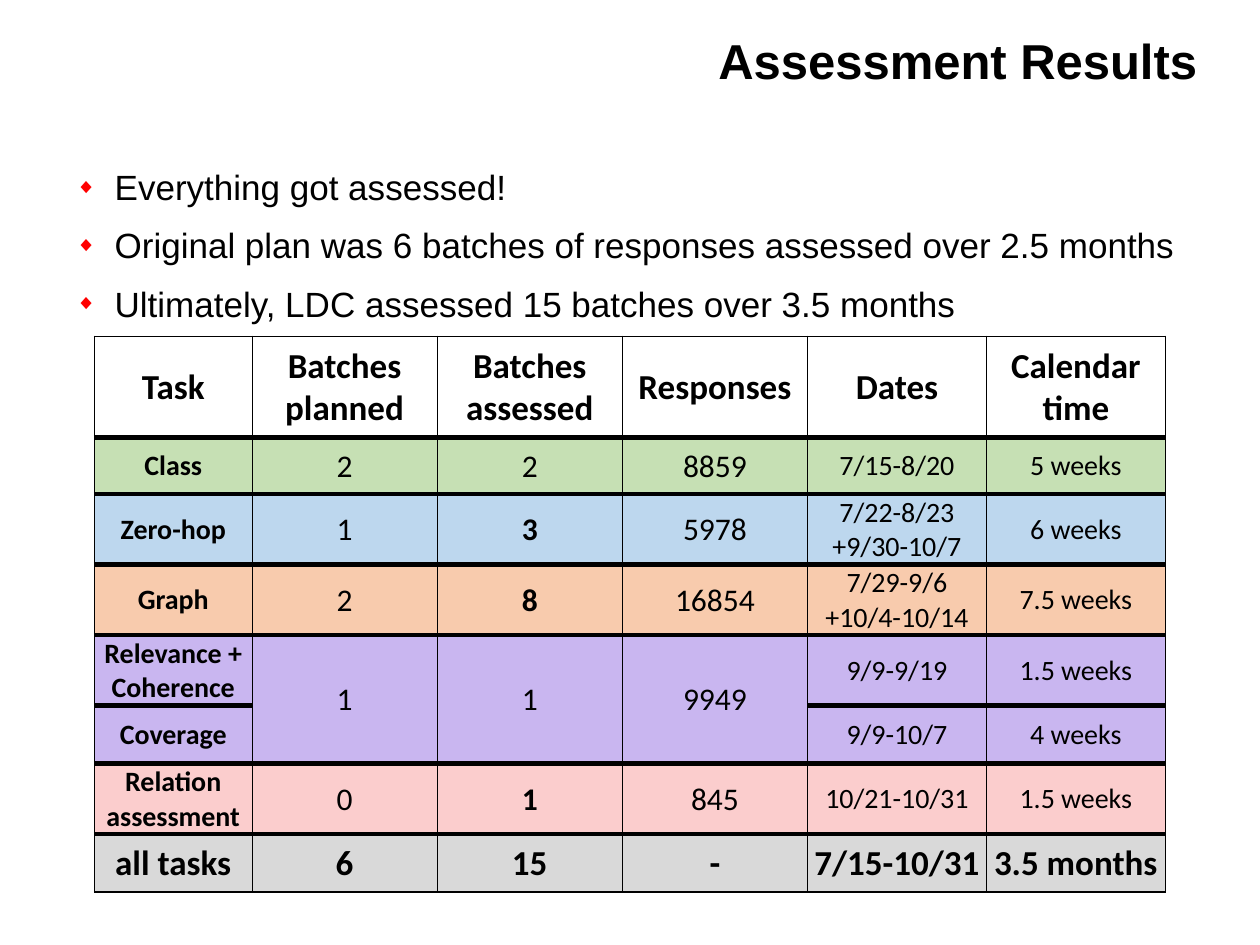
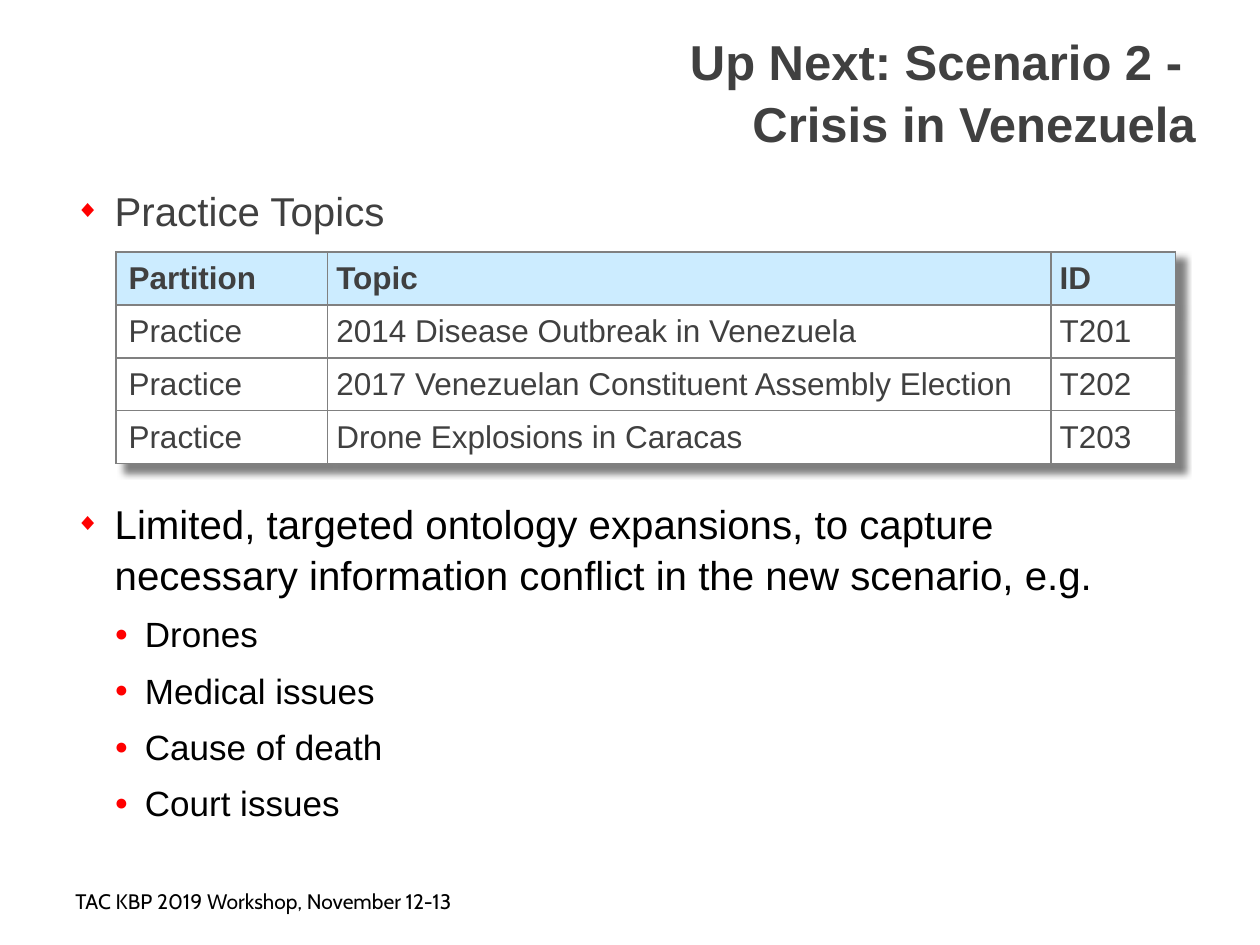
from lxml import etree
from pptx import Presentation
from pptx import util as u
from pptx.dml.color import RGBColor
from pptx.enum import text as t
from pptx.oxml.ns import qn

hue = RGBColor.from_string
INK, GREY, RED = "000000", "404040", "FF0000"
CELL = u.Inches(0.1)  # the slide is a grid of 100 columns by 75 rows
BULLETS = [("◆", 60, 0.31, 0.31, 8), ("●", 65, 0.55, 0.24, 7)]
MARGINS = ("margin_left", "margin_top", "margin_right", "margin_bottom")


def style(frame, color, align=t.PP_ALIGN.LEFT, **fmt):
    for para in frame.paragraphs:
        para.alignment = align
        for run in para.runs:
            run.font.color.rgb = hue(color)
            for key, val in fmt.items():
                setattr(run.font, key, val)


def edge(cell, color, **widths):
    """Draw the cell's borders; widths in points, given as L, R, T, B in that order."""
    props = cell._tc.get_or_add_tcPr()
    for spot, (side, width) in enumerate(widths.items()):
        line = etree.Element(qn(f"a:ln{side}"), w=str(int(u.Pt(width))))
        fill = etree.SubElement(line, qn("a:solidFill"))
        etree.SubElement(fill, qn("a:srgbClr"), val=color)
        props.insert(spot, line)


# Each list item: level, text, size, colour, extra space before
pages = [
    dict(
        title="Assessment Results", color=INK, head=(36.7, 2.2), top=12.5,
        items=[
            (0, "Everything got assessed!", 20, INK, 0),
            (0, "Original plan was 6 batches of responses assessed over 2.5 months", 20, INK, 0),
            (0, "Ultimately, LDC assessed 15 batches over 3.5 months", 20, INK, 0),
        ],
        spot=(7.5, 26.7),
        cols=[12.5, 14.7, 14.7, 14.7, 14.2, 14.2],
        rows=[8, 4.5, 5.6, 5.6, 5.6, 4.6, 5.6, 4.6],
        data=[
            ["Task", "Batches planned", "Batches assessed", "Responses", "Dates", "Calendar time"],
            ["Class", "2", "2", "8859", "7/15-8/20", "5 weeks"],
            ["Zero-hop", "1", "3", "5978", "7/22-8/23\n+9/30-10/7", "6 weeks"],
            ["Graph", "2", "8", "16854", "7/29-9/6\n+10/4-10/14", "7.5 weeks"],
            ["Relevance +\nCoherence", "1", "1", "9949", "9/9-9/19", "1.5 weeks"],
            ["Coverage", "", "", "", "9/9-10/7", "4 weeks"],
            ["Relation assessment", "0", "1", "845", "10/21-10/31", "1.5 weeks"],
            ["all tasks", "6", "15", "-", "7/15-10/31", "3.5 months"],
        ],
    ),
    dict(
        title="Up Next: Scenario 2 - \vCrisis in Venezuela", color=GREY, head=(36.6, 2.3), top=14.1,
        items=[
            (0, "Practice Topics", 23, GREY, 0),
            (0, "Limited, targeted ontology expansions, to capture necessary information "
                "conflict in the new scenario, e.g.", 23, INK, 142),
            (1, "Drones", 20, INK, 0),
            (1, "Medical issues", 20, INK, 0),
            (1, "Cause of death", 20, INK, 0),
            (1, "Court issues", 20, INK, 0),
        ],
        spot=(9.2, 20),
        cols=[16.8, 57.4, 9.9],
        rows=[4.2] * 4,
        data=[
            ["Partition", "Topic", "ID"],
            ["Practice", "2014 Disease Outbreak in Venezuela", "T201"],
            ["Practice", "2017 Venezuelan Constituent Assembly Election", "T202"],
            ["Practice", "Drone Explosions in Caracas", "T203"],
        ],
    ),
]

deck = Presentation()
deck.slide_width, deck.slide_height = 100 * CELL, 75 * CELL
tables = []

for page in pages:
    slide = deck.slides.add_slide(deck.slide_layouts[1])
    title, body = slide.placeholders
    boxes = [(title, (*page["head"], 58.3, 8.7)), (body, (5, page["top"], 90, 54.2))]
    for shape, box in boxes:
        for key, val in zip(("left", "top", "width", "height"), box):
            setattr(shape, key, int(val * CELL))
        shape.text_frame.auto_size = t.MSO_AUTO_SIZE.NONE
        shape.text_frame.vertical_anchor = t.MSO_ANCHOR.TOP

    frame = title.text_frame
    for side in MARGINS:
        setattr(frame, side, 0)
    frame.text = page["title"]
    frame.paragraphs[0].line_spacing = 1.05
    style(frame, page["color"], t.PP_ALIGN.RIGHT, name="Arial", size=u.Pt(28), bold=True)

    frame = body.text_frame
    for n, (level, words, size, color, extra) in enumerate(page["items"]):
        para = frame.add_paragraph() if n else frame.paragraphs[0]
        para.level = level
        mark, share, left, hang, before = BULLETS[level]
        props = para._p.get_or_add_pPr()
        props.set("marL", str(int(u.Inches(left))))
        props.set("indent", str(-int(u.Inches(hang))))
        tint = etree.SubElement(props, qn("a:buClr"))
        etree.SubElement(tint, qn("a:srgbClr"), val=RED)
        etree.SubElement(props, qn("a:buSzPct"), val=str(share * 1000))
        etree.SubElement(props, qn("a:buFont"), typeface="Arial")
        etree.SubElement(props, qn("a:buChar"), char=mark)
        para.line_spacing = 1.05
        para.space_before = u.Pt(before + extra if n else 0)
        run = para.add_run()
        run.text = words
        run.font.name, run.font.size = "Arial", u.Pt(size)
        run.font.color.rgb = hue(color)

    cols, rows = page["cols"], page["rows"]
    area = [int(v * CELL) for v in (*page["spot"], sum(cols), sum(rows))]
    table = slide.shapes.add_table(len(rows), len(cols), *area).table
    table.first_row = table.horz_banding = False
    for col, width in zip(table.columns, cols):
        col.width = int(width * CELL)
    for row, height, words in zip(table.rows, rows, page["data"]):
        row.height = int(height * CELL)
        for cell, word in zip(row.cells, words):
            cell.text = word
            cell.vertical_anchor = t.MSO_ANCHOR.MIDDLE
    tables.append(table)

results, topics = tables

# Results: one colour per task, heavy rules between rows
for c in (1, 2, 3):
    results.cell(4, c).merge(results.cell(5, c))
fills = ["FFFFFF", "C6E0B4", "BDD7EE", "F8CBAD", "C9B6F0", "C9B6F0", "FBCDCD", "D9D9D9"]
sizes = [16, 18, 18, 18, 16, 16]
last = len(fills) - 1
for r, fill in enumerate(fills):
    words = pages[0]["data"][r]
    for c, size in enumerate(sizes):
        cell = results.cell(r, c)
        for side, gap in zip(MARGINS, (0.01, 0.01, 0.01, 0)):
            setattr(cell, side, u.Inches(gap))
        cell.fill.solid()
        cell.fill.fore_color.rgb = hue(fill)
        ends = r in (0, last)
        changed = c == 2 and words[2] != words[1]
        style(cell.text_frame, INK, t.PP_ALIGN.CENTER, name="Calibri",
              size=u.Pt(20 if ends else size), bold=ends or c == 0 or changed)
        widths = dict(L=0.5 if c else 1, R=0.5, T=3 if r else 1, B=1 if r == last else 3)
        if cell.is_spanned:
            del widths["T"]
        edge(cell, INK, **widths)

# Topics: pale header, thin grey grid and a soft shadow
for r, row in enumerate(topics.rows):
    for c, cell in enumerate(row.cells):
        if c:
            for side in MARGINS:
                setattr(cell, side, u.Inches(0.07))
        cell.fill.solid()
        cell.fill.fore_color.rgb = hue("FFFFFF" if r else "CCECFF")
        style(cell.text_frame, GREY, name="Arial", size=u.Pt(18), bold=r == 0)
        edge(cell, "808080", L=1, R=1, T=1, B=1)
props = topics._tbl.tblPr
glow = etree.Element(qn("a:effectLst"))
props.insert(0, glow)
shade = etree.SubElement(glow, qn("a:outerShdw"), blurRad="50800", dist="76200", dir="2700000")
tint = etree.SubElement(shade, qn("a:srgbClr"), val=INK)
etree.SubElement(tint, qn("a:alpha"), val="50000")

note = slide.shapes.add_textbox(*[int(v * CELL) for v in (5, 70, 66.7, 3.5)]).text_frame
note.word_wrap = True
note.text = "TAC KBP 2019 Workshop, November 12-13"
style(note, INK, name="Cabin", size=u.Pt(12))

deck.save("out.pptx")
